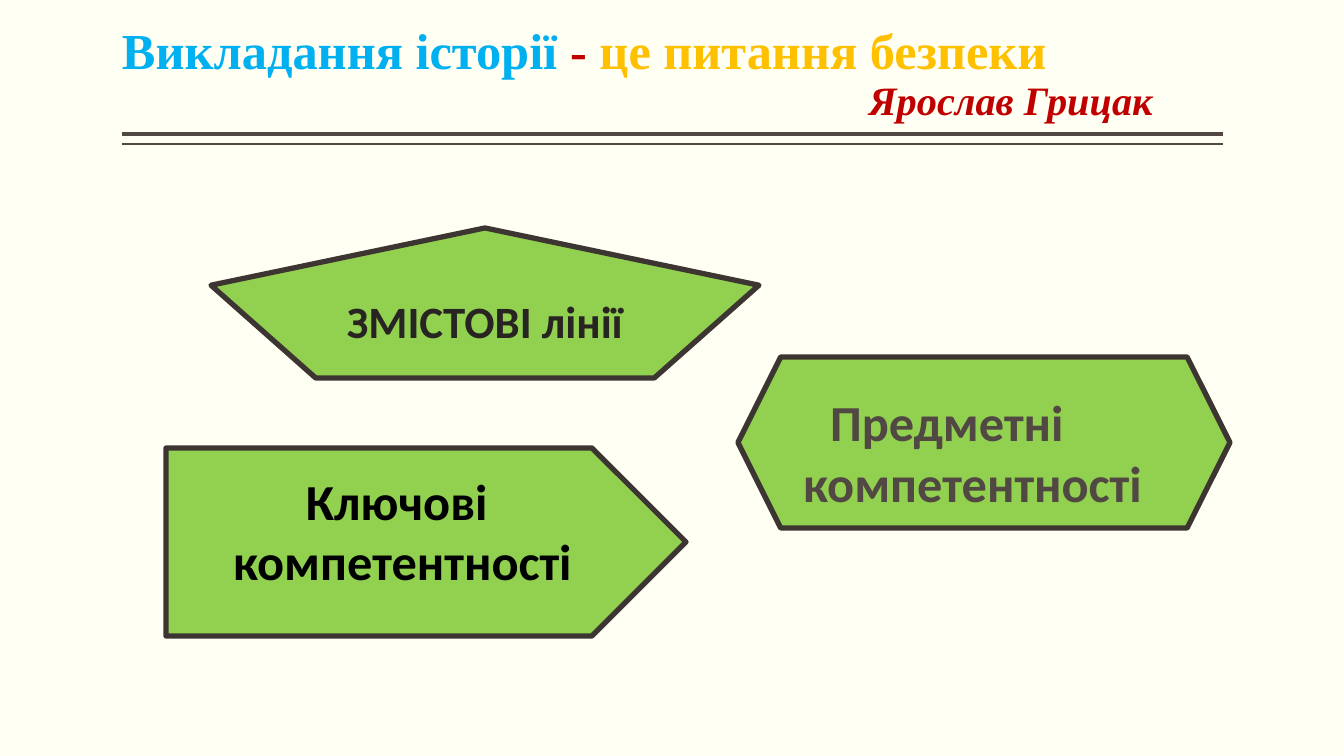
from pptx import Presentation
from pptx.dml.color import RGBColor
from pptx.enum.shapes import MSO_CONNECTOR, MSO_SHAPE
from pptx.enum.text import MSO_ANCHOR, PP_ALIGN
from pptx.oxml.ns import qn
from pptx.util import Pt
from lxml.etree import SubElement

SCALE = 914400 / 100.8  # EMU in one px
PAPER, RULE, GREEN, EDGE, RED = "FFFFF3", "514843", "92D050", "3C3532", "C00000"
SERIF, SANS = "Times New Roman", "Calibri"

# Each line of text: (runs, left indent in px); each run: (text, colour)
HEAD = [("Викладання історії ", "00B0F0"), ("- ", RED), ("це питання безпеки", "FFC000")]
AUTHOR = [("Ярослав Грицак", RED)]
TITLE_BOX = (122, 8, 1101, 121)

LEFT, RIGHT = 122, 1223
RULES = [(134, 3), (144, 1)]  # y, weight

# preset, box, lines, size, colour, align, (top, bottom) inset
BLOCKS = [
    (MSO_SHAPE.REGULAR_PENTAGON, (211, 228, 548, 150),
     [("ЗМІСТОВІ лінії", 0)], 32, "282422", PP_ALIGN.CENTER, (5, 5)),
    (MSO_SHAPE.PENTAGON, (166, 448, 520, 188),
     [("Ключові ", 0), ("компетентності", 0)], 36, "000000", PP_ALIGN.CENTER, (0, 23)),
    (MSO_SHAPE.HEXAGON, (738, 357, 492, 171),
     [("Предметні", 27), ("компетентності", 0)], 36, RULE, PP_ALIGN.LEFT, (19, 0)),
]


def px(n):
    return round(n * SCALE)


def rgb(code):
    return RGBColor.from_string(code)


def set_up(frame, anchor, side, top, bottom):
    """Set wrapping, anchor and insets of a text frame."""
    frame.word_wrap = True
    frame.vertical_anchor = anchor
    frame.margin_left = frame.margin_right = px(side)
    frame.margin_top, frame.margin_bottom = px(top), px(bottom)


def write(frame, runs, first=False, size=36, font=SANS, italic=False,
          align=PP_ALIGN.LEFT, indent=0, spacing=1.0):
    """Write one bold paragraph of coloured runs."""
    para = frame.paragraphs[0] if first else frame.add_paragraph()
    para.alignment, para.line_spacing = align, spacing
    if indent:
        para._p.get_or_add_pPr().set("marL", str(px(indent)))
    for text, color in runs:
        run = para.add_run()
        run.text = text
        run.font.name, run.font.size = font, Pt(size)
        run.font.bold, run.font.italic = True, italic
        run.font.color.rgb = rgb(color)


def add_rule(slide, y, weight):
    line = slide.shapes.add_connector(
        MSO_CONNECTOR.STRAIGHT, px(LEFT), px(y), px(RIGHT), px(y))
    line.line.color.rgb, line.line.width = rgb(RULE), Pt(weight)
    SubElement(line._element.spPr, qn("a:effectLst"))


def add_title(slide):
    frame = slide.shapes.add_textbox(*map(px, TITLE_BOX)).text_frame
    set_up(frame, MSO_ANCHOR.BOTTOM, 0, 5, 5)
    write(frame, HEAD, first=True, font=SERIF, spacing=0.9)
    write(frame, AUTHOR, size=28.8, font=SERIF, italic=True, indent=747, spacing=0.9)


def add_block(slide, preset, box, lines, size, color, align, inset):
    shape = slide.shapes.add_shape(preset, *map(px, box))
    shape.shadow.inherit = False
    shape.fill.solid()
    shape.fill.fore_color.rgb = rgb(GREEN)
    shape.line.color.rgb, shape.line.width = rgb(EDGE), Pt(3.78)
    set_up(shape.text_frame, MSO_ANCHOR.MIDDLE, 10, *inset)
    for i, (text, indent) in enumerate(lines):
        write(shape.text_frame, [(text, color)], first=i == 0, size=size,
              align=align, indent=indent)


def main():
    deck = Presentation()
    deck.slide_width, deck.slide_height = px(1344), px(756)
    slide = deck.slides.add_slide(deck.slide_layouts[6])
    slide.background.fill.solid()
    slide.background.fill.fore_color.rgb = rgb(PAPER)
    for y, weight in RULES:
        add_rule(slide, y, weight)
    add_title(slide)
    for block in BLOCKS:
        add_block(slide, *block)
    deck.save("out.pptx")


if __name__ == "__main__":
    main()
